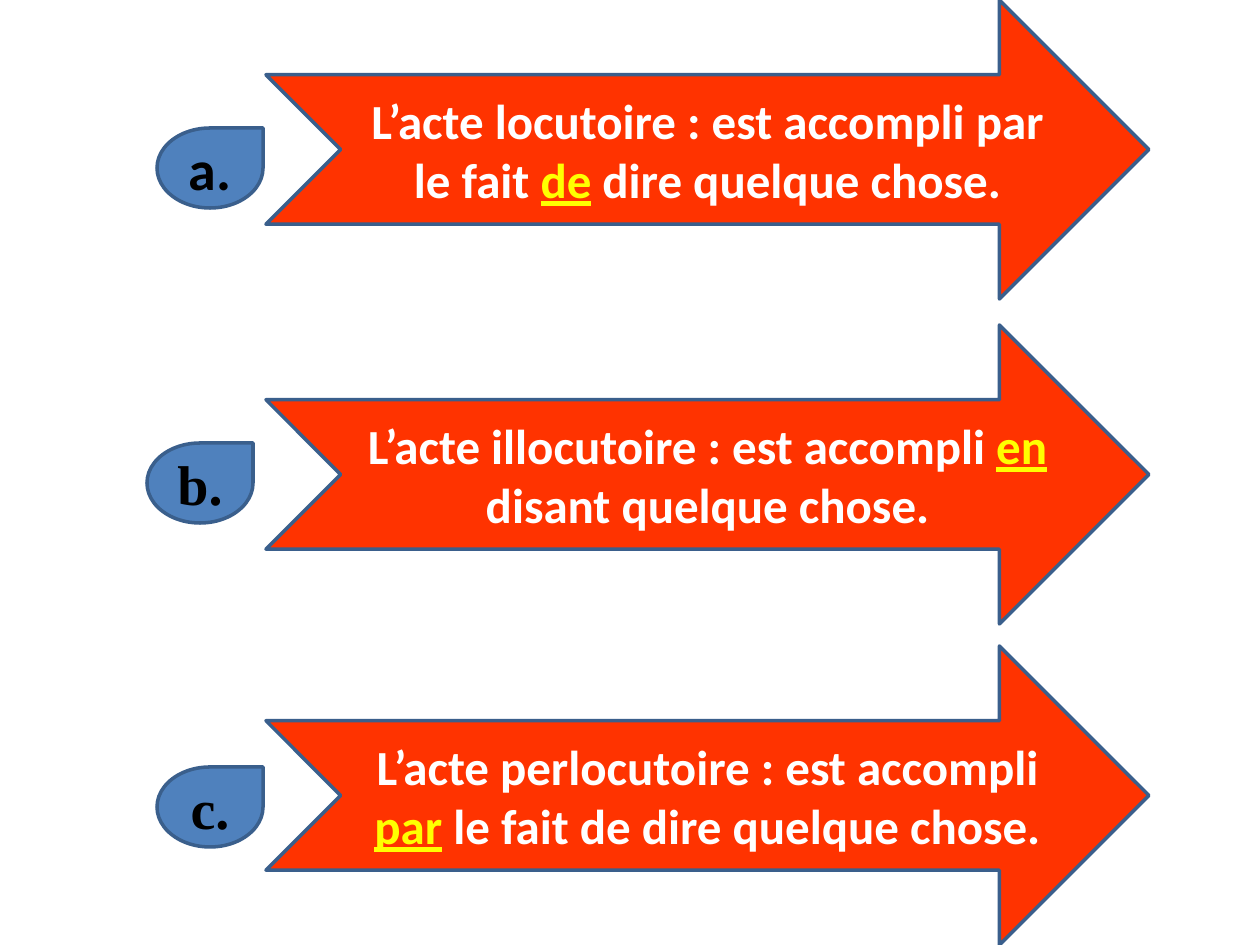
from pptx import Presentation
from pptx.dml.color import RGBColor
from pptx.enum.shapes import MSO_SHAPE as Shape
from pptx.enum.text import MSO_ANCHOR as Anchor, PP_ALIGN as Align
from pptx.util import Pt

PX = 914400 // 126
RED, BLUE, EDGE = "FF3300", "4F81BD", "3A5F8C"
WHITE, YELLOW, BLACK = "FFFFFF", "FFFF00", "000000"

ARROW_X, ARROW_W, ARROW_H = 266, 883, 299
DROP_W, DROP_H = 106, 80

# arrow top, (before, key word, after), label, label font, drop left and top
ACTS = [
    (0, ("L’acte locutoire : est accompli par le fait ", "de",
         " dire quelque chose."), "a.", "Calibri", 157, 128),
    (325, ("L’acte illocutoire : est accompli ", "en",
           " disant quelque chose."), "b.", "Times New Roman", 147, 443),
    (646, ("L’acte perlocutoire : est accompli ", "par",
           " le fait de dire quelque chose."), "c.", "Times New Roman", 157, 767),
]


def rgb(code):
    return RGBColor.from_string(code)


def add_box(slide, kind, box, fill):
    """Add a filled, outlined shape and return it with its centred paragraph."""
    shape = slide.shapes.add_shape(kind, *(n * PX for n in box))
    shape.shadow.inherit = False
    shape.fill.solid()
    shape.fill.fore_color.rgb = rgb(fill)
    shape.line.color.rgb = rgb(EDGE)
    shape.line.width = Pt(2)
    frame = shape.text_frame
    frame.word_wrap = True
    frame.vertical_anchor = Anchor.MIDDLE
    para = frame.paragraphs[0]
    para.alignment = Align.CENTER
    return para


def add_run(para, text, size, name, color, under=False):
    run = para.add_run()
    run.text = text
    font = run.font
    font.size, font.name, font.bold = Pt(size), name, True
    font.underline = under
    font.color.rgb = rgb(color)


def main():
    prs = Presentation()
    prs.slide_width, prs.slide_height = 1260 * PX, 945 * PX
    slide = prs.slides.add_slide(prs.slide_layouts[6])
    for top, (before, key, after), label, face, x, y in ACTS:
        para = add_box(slide, Shape.NOTCHED_RIGHT_ARROW,
                       (ARROW_X, top, ARROW_W, ARROW_H), RED)
        add_run(para, before, 28, "Calibri", WHITE)
        add_run(para, key, 28, "Calibri", YELLOW, under=True)
        add_run(para, after, 28, "Calibri", WHITE)
        para = add_box(slide, Shape.TEAR, (x, y, DROP_W, DROP_H), BLUE)
        add_run(para, label, 32, face, BLACK)
    prs.save("out.pptx")


if __name__ == "__main__":
    main()
